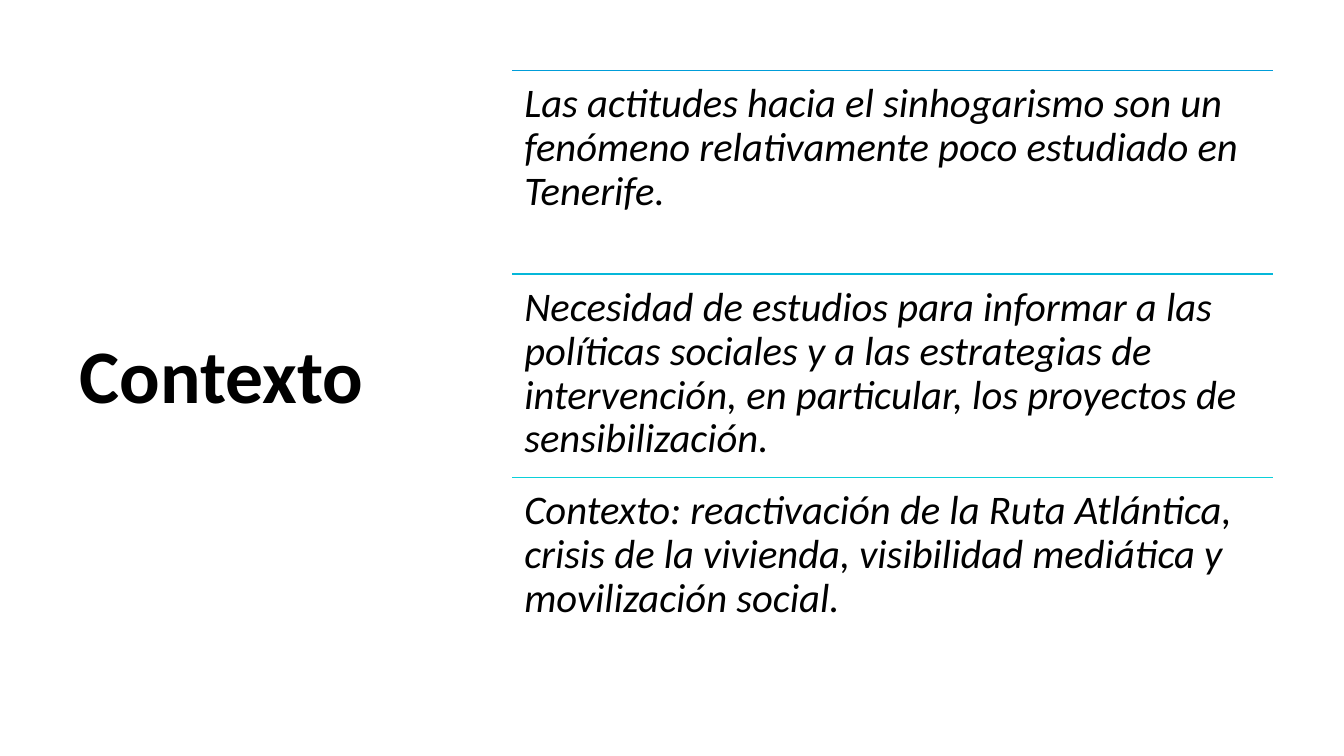
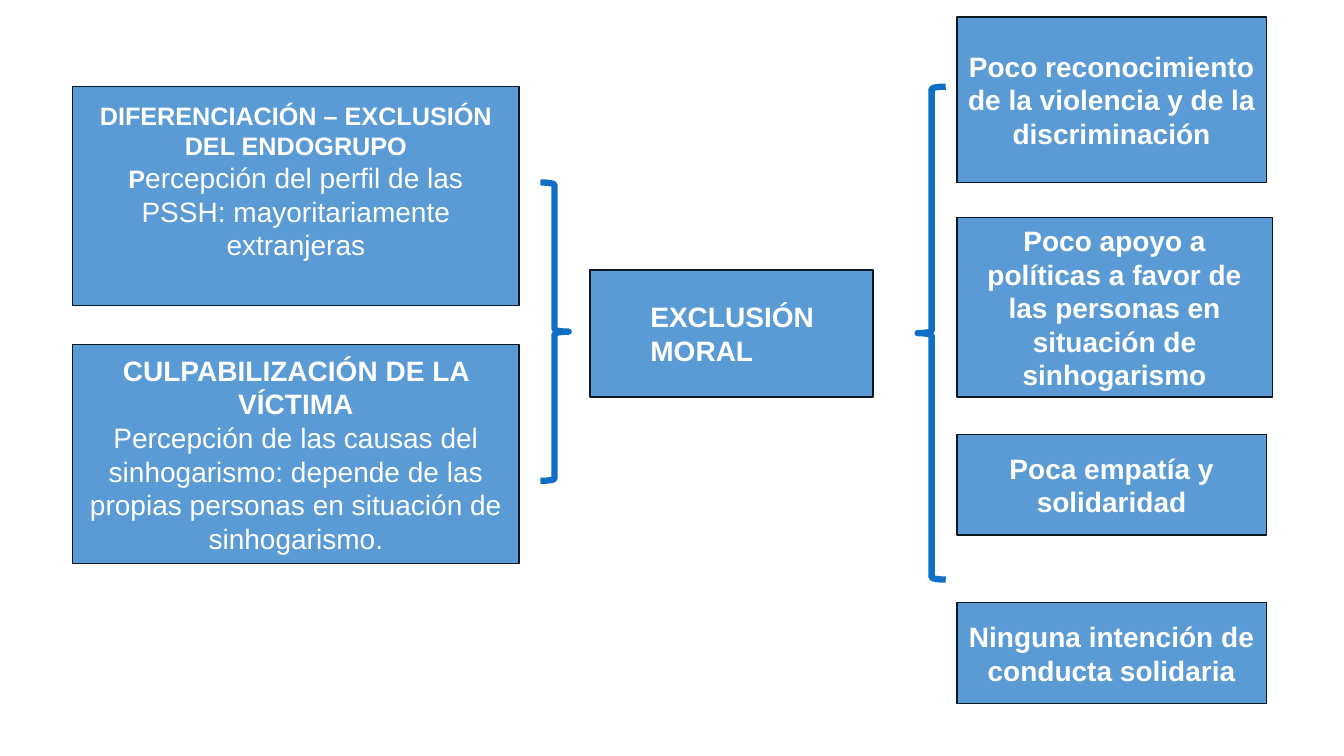
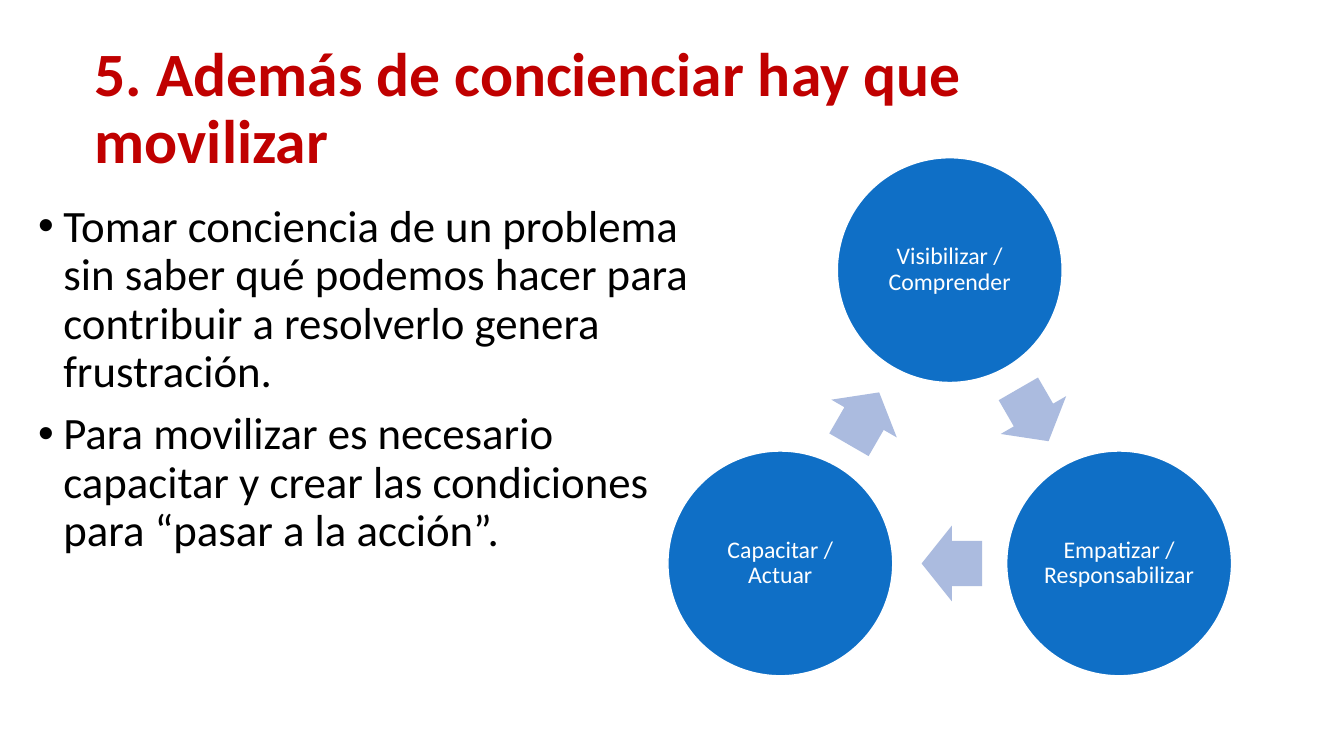
from math import cos, radians, sin

from lxml.etree import SubElement
from pptx import Presentation
from pptx.dml.color import RGBColor
from pptx.enum.shapes import MSO_CONNECTOR, MSO_SHAPE
from pptx.enum.text import MSO_ANCHOR, MSO_AUTO_SIZE, PP_ALIGN
from pptx.oxml.ns import qn
from pptx.util import Inches, Pt

SLIDE_W, SLIDE_H = 13.33, 7.5
TITLE_ONLY, BLANK = 5, 6
HEADING_FONT, DIAGRAM_FONT = "Calibri", "Arial"
BLACK, WHITE, RED = "000000", "FFFFFF", "C00000"
BLUE, BOX_BLUE, BOX_EDGE, ARROW_BLUE = "0F6FC6", "5B9BD5", "091723", "ABBBDF"
LINE_SPACING = 0.9
INSETS = (0.1, 0.05, 0.1, 0.05)


def color(hex_code):
    return RGBColor.from_string(hex_code)


def inches(box):
    return [Inches(length) for length in box]


def set_frame(frame, anchor=MSO_ANCHOR.TOP, insets=INSETS):
    frame.word_wrap = True
    frame.auto_size = MSO_AUTO_SIZE.NONE
    frame.vertical_anchor = anchor
    (frame.margin_left, frame.margin_top,
     frame.margin_right, frame.margin_bottom) = inches(insets)


def write(frame, paragraphs, font, hex_code, align=PP_ALIGN.LEFT, spacing=None):
    """Fill the frame; each paragraph is a list of (text, size, style) runs, style being "b", "i" or ""."""
    for index, runs in enumerate(paragraphs):
        paragraph = frame.add_paragraph() if index else frame.paragraphs[0]
        paragraph.alignment = align
        if spacing:
            paragraph.line_spacing = spacing
        for text, size, style in runs:
            run = paragraph.add_run()
            run.text = text
            run.font.name = font
            run.font.size = Pt(size)
            run.font.bold = "b" in style
            run.font.italic = "i" in style
            run.font.color.rgb = color(hex_code)


def add_title(slide, text, box, size, hex_code):
    title = slide.shapes.title
    title.left, title.top, title.width, title.height = inches(box)
    set_frame(title.text_frame, MSO_ANCHOR.MIDDLE)
    write(title.text_frame, [[(text, size, "b")]], HEADING_FONT, hex_code,
          spacing=LINE_SPACING)


def add_text(slide, box, paragraphs, insets=INSETS):
    frame = slide.shapes.add_textbox(*inches(box)).text_frame
    set_frame(frame, insets=insets)
    write(frame, paragraphs, HEADING_FONT, BLACK, spacing=LINE_SPACING)
    return frame


def add_bullets(frame, indent, space_before):
    for paragraph in frame.paragraphs:
        paragraph.space_before = Pt(space_before)
        properties = paragraph._p.get_or_add_pPr()
        properties.set("marL", str(Inches(indent)))
        properties.set("indent", str(-Inches(indent)))
        SubElement(properties, qn("a:buFont"), typeface="Arial")
        SubElement(properties, qn("a:buChar"), char="•")


def add_figure(slide, preset, box, fill=None, edge=None, edge_width=1, rotation=0):
    figure = slide.shapes.add_shape(preset, *inches(box))
    figure.shadow.inherit = False
    figure.rotation = rotation
    if fill:
        figure.fill.solid()
        figure.fill.fore_color.rgb = color(fill)
    else:
        figure.fill.background()
    if edge:
        figure.line.color.rgb = color(edge)
        figure.line.width = Pt(edge_width)
    else:
        figure.line.fill.background()
    return figure


def add_concept(slide, box, paragraphs, align=PP_ALIGN.CENTER, insets=INSETS):
    concept = add_figure(slide, MSO_SHAPE.RECTANGLE, box, BOX_BLUE, BOX_EDGE)
    set_frame(concept.text_frame, MSO_ANCHOR.MIDDLE, insets)
    write(concept.text_frame, paragraphs, DIAGRAM_FONT, WHITE, align)


def add_brace(slide, box, rotation=0):
    add_figure(slide, MSO_SHAPE.LEFT_BRACE, box, edge=BLUE, edge_width=4.5,
               rotation=rotation)


def add_rule(slide, left, top, width, hex_code):
    rule = slide.shapes.add_connector(
        MSO_CONNECTOR.STRAIGHT, *inches((left, top, left + width, top)))
    rule.line.color.rgb = color(hex_code)
    rule.line.width = Pt(1)
    SubElement(rule._element.spPr, qn("a:effectLst"))


def add_cycle(slide, steps, center, radius, diameter):
    """Place the steps clockwise from the top, with an arrow from each to the next."""
    turn = 360 / len(steps)
    arrow_w, arrow_h, arrow_setback = 0.6, 0.75, 0.02

    def around(angle, distance):
        return (center[0] + distance * cos(radians(angle)),
                center[1] + distance * sin(radians(angle)))

    for index, step in enumerate(steps):
        angle = index * turn - 90
        x, y = around(angle, radius)
        circle = add_figure(
            slide, MSO_SHAPE.OVAL,
            (x - diameter / 2, y - diameter / 2, diameter, diameter), BLUE, WHITE)
        set_frame(circle.text_frame, MSO_ANCHOR.MIDDLE, (0.02,) * 4)
        write(circle.text_frame, [[(step, 17, "")]], HEADING_FONT, WHITE,
              PP_ALIGN.CENTER, LINE_SPACING)

        heading = angle + turn / 2 + 90
        x, y = around(angle + turn / 2, radius * cos(radians(turn / 2)))
        x -= arrow_setback * cos(radians(heading))
        y -= arrow_setback * sin(radians(heading))
        arrow = add_figure(
            slide, MSO_SHAPE.RIGHT_ARROW,
            (x - arrow_w / 2, y - arrow_h / 2, arrow_w, arrow_h),
            ARROW_BLUE, rotation=heading)
        arrow.adjustments[0], arrow.adjustments[1] = 0.6, 0.5


def build_context(slide):
    add_title(slide, "Contexto", (0.69, 0.7, 3.74, 6.11), 54, BLACK)
    left, top, width, row_height = 5.08, 0.7, 7.55, 2.02
    points = [
        ("009DD9", "Las actitudes hacia el sinhogarismo son un fenómeno "
                   "relativamente poco estudiado en Tenerife."),
        ("05B7D9", "Necesidad de estudios para informar a las políticas sociales "
                   "y a las estrategias de intervención, en particular, los "
                   "proyectos de sensibilización."),
        ("0BD0D9", "Contexto: reactivación de la Ruta Atlántica, crisis de la "
                   "vivienda, visibilidad mediática y movilización social."),
    ]
    for row, (rule_color, point) in enumerate(points):
        row_top = top + row * row_height
        add_rule(slide, left, row_top, width, rule_color)
        add_text(slide, (left, row_top, width, row_height),
                 [[(point, 29, "i")]], (0.12,) * 4)


def build_moral_exclusion(slide):
    cause_left, cause_w, cause_h = 0.72, 4.43, 2.17
    add_concept(slide, (cause_left, 0.86, cause_w, cause_h), [
        [("DIFERENCIACIÓN – EXCLUSIÓN DEL ENDOGRUPO", 18, "b")],
        [("P", 18, "b"),
         ("ercepción del perfil de las PSSH: mayoritariamente extranjeras", 20, "")],
    ], insets=(0.1, 0.05, 0.1, 0.35))
    add_concept(slide, (cause_left, 3.42, cause_w, cause_h), [
        [("CULPABILIZACIÓN DE LA VÍCTIMA", 20, "b")],
        [("Percepción de las causas del sinhogarismo: depende de las propias "
          "personas en situación de sinhogarismo.", 20, "")],
    ])

    effects = [
        (0.17, 3.07, 1.64,
         "Poco reconocimiento de la violencia y de la discriminación"),
        (2.16, 3.13, 1.78,
         "Poco apoyo a políticas a favor de las personas en situación de sinhogarismo"),
        (4.31, 3.07, 1, "Poca empatía y solidaridad"),
        (5.98, 3.07, 1, "Ninguna intención de conducta solidaria"),
    ]
    for top, width, height, effect in effects:
        add_concept(slide, (9.49, top, width, height), [[(effect, 20, "b")]])

    add_concept(slide, (5.85, 2.68, 2.81, 1.26), [[("EXCLUSIÓN MORAL", 20, "b")]],
                PP_ALIGN.LEFT, (0.6, 0.05, 0.1, 0.05))
    add_brace(slide, (9.1, 0.86, 0.28, 4.89))
    add_brace(slide, (5.36, 1.81, 0.28, 2.96), rotation=180)


def build_mobilization(slide):
    add_title(slide, "5. Además de concienciar hay que movilizar",
              (0.84, 0.21, 11, 1.76), 44, RED)
    arguments = add_text(slide, (0.28, 1.97, 6.84, 4.5), [
        [("Tomar conciencia de un problema sin saber qué podemos hacer para "
          "contribuir a resolverlo genera frustración.", 32, "")],
        [("Para movilizar es necesario capacitar y crear las condiciones para "
          "“pasar a la acción”.", 32, "")],
    ])
    add_bullets(arguments, indent=0.25, space_before=10)
    add_cycle(slide, ["Visibilizar / Comprender", "Empatizar / Responsabilizar",
                      "Capacitar / Actuar"],
              center=(9.42, 4.62), radius=1.94, diameter=2.23)


def main():
    deck = Presentation()
    deck.slide_width, deck.slide_height = inches((SLIDE_W, SLIDE_H))
    for layout, build in [(TITLE_ONLY, build_context),
                          (BLANK, build_moral_exclusion),
                          (TITLE_ONLY, build_mobilization)]:
        build(deck.slides.add_slide(deck.slide_layouts[layout]))
    deck.save("out.pptx")


if __name__ == "__main__":
    main()
